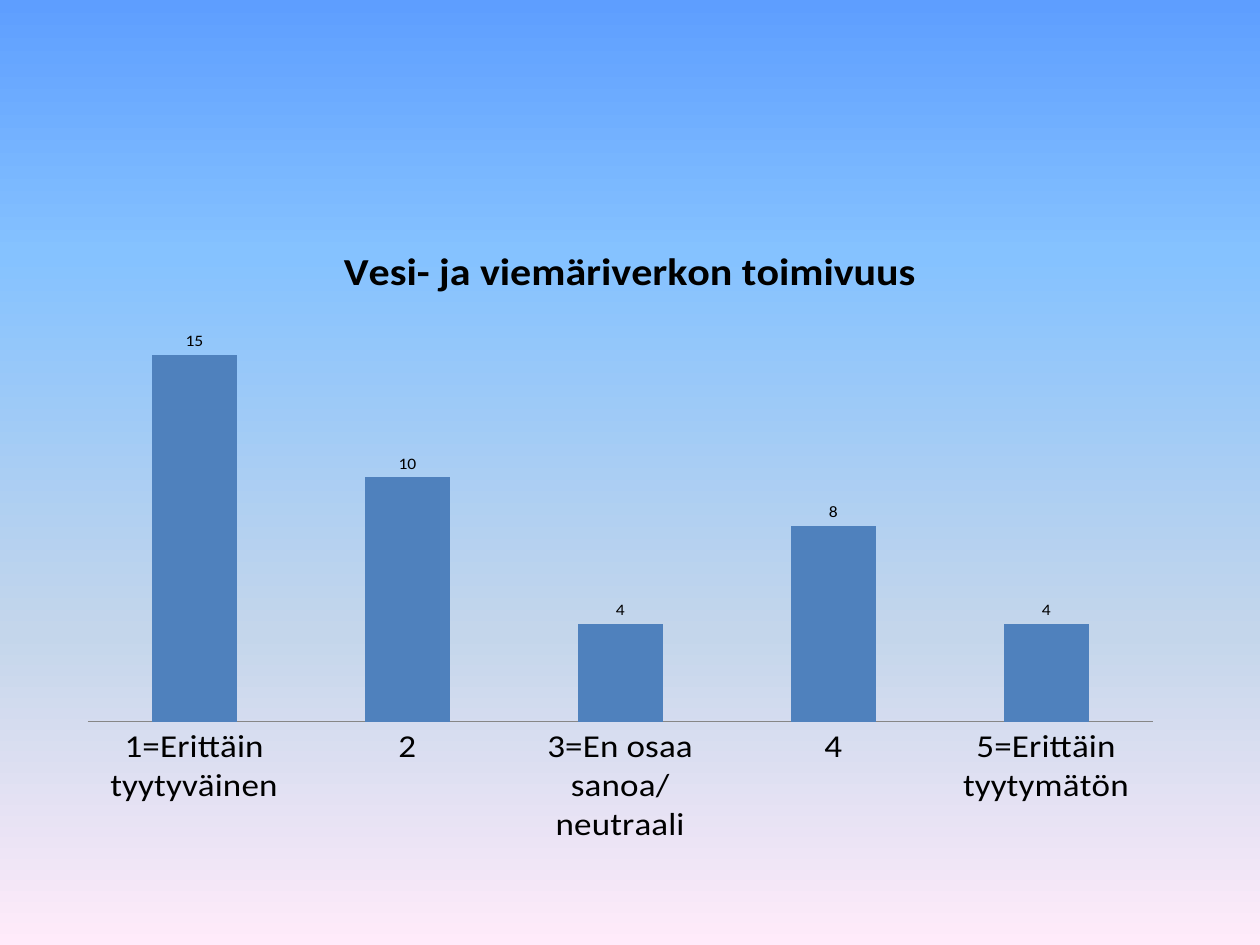
from typing import NamedTuple

import pptx
import pptx.chart.data
import pptx.dml.color
import pptx.enum.chart
import pptx.oxml
import pptx.oxml.ns
import pptx.util
from lxml import etree

Pt = pptx.util.Pt
RGBColor = pptx.dml.color.RGBColor
qn = pptx.oxml.ns.qn

BLACK = RGBColor(0x00, 0x00, 0x00)
BAR_BLUE = RGBColor(0x4F, 0x81, 0xBD)
AXIS_GRAY = RGBColor(0x86, 0x86, 0x86)
SKY_TOP = RGBColor(0x5E, 0x9E, 0xFF)
SKY_LIGHT = RGBColor(0x85, 0xC2, 0xFF)
SKY_PALE = RGBColor(0xC4, 0xD6, 0xEB)
SKY_PINK = RGBColor(0xFF, 0xEB, 0xFA)
FONT_NAME = "Calibri"


class GradientStop(NamedTuple):
    percent: int
    color: RGBColor


class Answer(NamedTuple):
    label: str
    count: int


SKY = [
    GradientStop(0, SKY_TOP),
    GradientStop(27, SKY_LIGHT),
    GradientStop(67, SKY_PALE),
    GradientStop(100, SKY_PINK),
]
ANSWERS = [
    Answer("1=Erittäin tyytyväinen", 15),
    Answer("2", 10),
    Answer("3=En osaa sanoa/neutraali", 4),
    Answer("4", 8),
    Answer("5=Erittäin tyytymätön", 4),
]
PLOT_LAYOUT = {
    "layoutTarget": "inner", "xMode": "edge", "yMode": "edge",
    "x": 0.022, "y": 0.194, "w": 0.939, "h": 0.69,
}


def set_format(target, values: dict) -> None:
    for name, value in values.items():
        setattr(target, name, value)


def style_font(font, size: int, bold: bool = False) -> None:
    set_format(font, {"name": FONT_NAME, "size": Pt(size), "bold": bold})
    font.color.rgb = BLACK


def paint_background(slide, stops: list[GradientStop]) -> None:
    fill = slide.background.fill
    fill.gradient()
    fill.gradient_angle = 270
    stop_list = slide.element.find(".//" + qn("a:gsLst"))
    for old_stop in list(stop_list):
        stop_list.remove(old_stop)
    for stop in stops:
        gs = etree.SubElement(stop_list, qn("a:gs"), pos=str(stop.percent * 1000))
        etree.SubElement(gs, qn("a:srgbClr"), val=str(stop.color))


def place_plot(chart, layout: dict) -> None:
    plot_area = chart.element.find(".//" + qn("c:plotArea"))
    for old_layout in plot_area.findall(qn("c:layout")):
        plot_area.remove(old_layout)
    holder = pptx.oxml.parse_xml(
        f"<c:layout {pptx.oxml.ns.nsdecls('c')}><c:manualLayout/></c:layout>")
    for name, value in layout.items():
        etree.SubElement(holder[0], qn(f"c:{name}"), val=str(value))
    plot_area.insert(0, holder)


def add_survey_chart(slide, title: str, answers: list[Answer]) -> None:
    survey = pptx.chart.data.CategoryChartData()
    survey.categories = [answer.label for answer in answers]
    survey.add_series("Series 1", [answer.count for answer in answers])
    chart = slide.shapes.add_chart(
        pptx.enum.chart.XL_CHART_TYPE.COLUMN_CLUSTERED,
        Pt(36), Pt(126), Pt(648), Pt(356.4), survey).chart
    style_font(chart.font, 10)
    chart.has_legend = False

    # Title
    chart.has_title = True
    heading = chart.chart_title.text_frame
    heading.text = title
    style_font(heading.paragraphs[0].runs[0].font, 24, bold=True)
    chart.chart_title.include_in_layout = False

    # Axes
    no_tick = pptx.enum.chart.XL_TICK_MARK.NONE
    answer_axis = chart.category_axis
    set_format(answer_axis, {"major_tick_mark": no_tick, "minor_tick_mark": no_tick})
    style_font(answer_axis.tick_labels.font, 20)
    answer_axis.format.line.color.rgb = AXIS_GRAY
    answer_axis.format.line.width = Pt(0.75)
    set_format(chart.value_axis, {"visible": False, "has_major_gridlines": False,
                                  "minimum_scale": 0})

    # Bars and their values
    bars = chart.plots[0]
    set_format(bars, {"gap_width": 150, "overlap": -25, "vary_by_categories": False,
                      "has_data_labels": True})
    set_format(bars.data_labels, {
        "show_value": True,
        "position": pptx.enum.chart.XL_LABEL_POSITION.OUTSIDE_END})
    style_font(bars.data_labels.font, 10)
    bar_fill = bars.series[0].format.fill
    bar_fill.solid()
    bar_fill.fore_color.rgb = BAR_BLUE
    place_plot(chart, PLOT_LAYOUT)


def main() -> None:
    deck = pptx.Presentation()
    set_format(deck, {"slide_width": Pt(720), "slide_height": Pt(540)})
    slide = deck.slides.add_slide(deck.slide_layouts[6])
    paint_background(slide, SKY)
    add_survey_chart(slide, "Vesi- ja viemäriverkon toimivuus", ANSWERS)
    deck.save("out.pptx")


if __name__ == "__main__":
    main()
